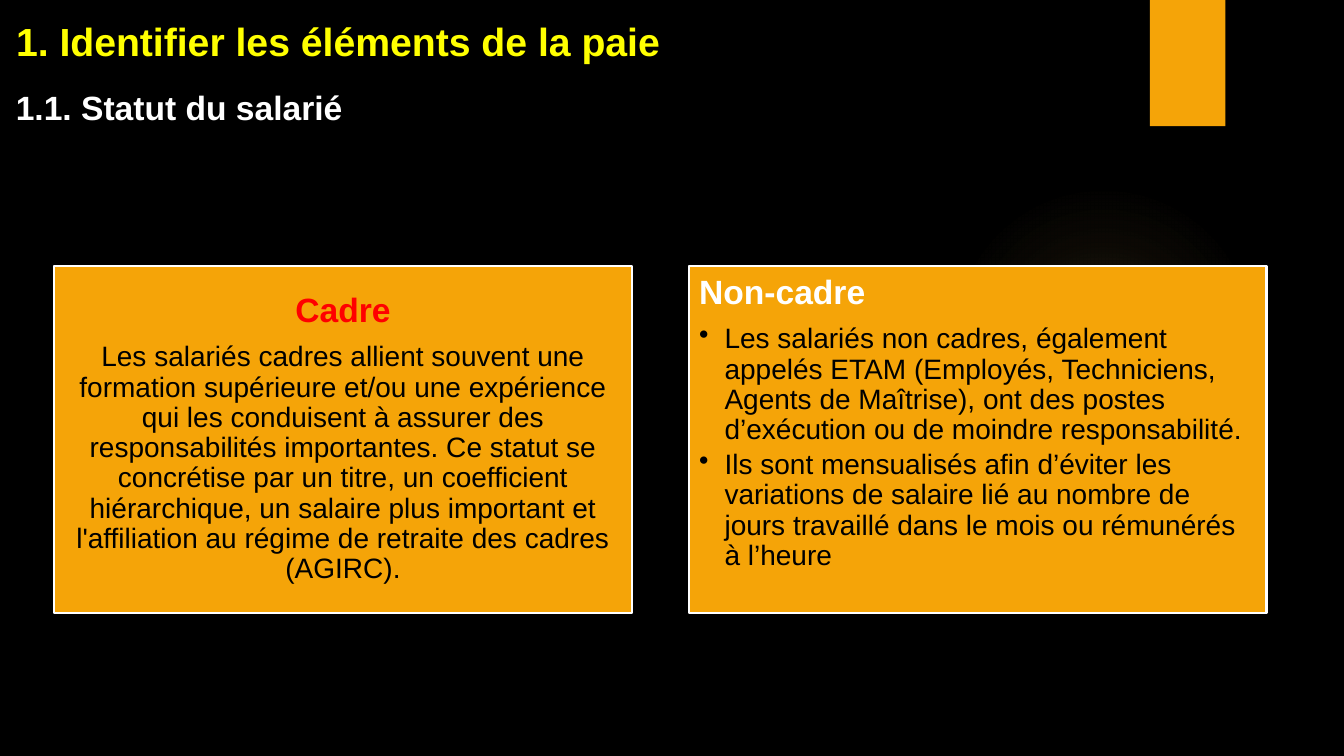
from dataclasses import dataclass

from pptx import Presentation
from pptx import util as u
from pptx.dml.color import RGBColor
from pptx.enum import shapes, text
from pptx.oxml import parse_xml
from pptx.oxml.ns import nsdecls


@dataclass(frozen=True)
class Theme:
    font: str = "Arial"
    background: str = "000000"
    accent: str = "F5A408"
    glow: str = "FAC96A"
    white: str = "FFFFFF"
    black: str = "000000"
    yellow: str = "FFFF00"
    red: str = "FF0000"
    title: int = 28
    heading: int = 24
    body: int = 20


class StatusSlide:
    def __init__(self, presentation, theme):
        self.theme = theme
        self.slide = presentation.slides.add_slide(presentation.slide_layouts[5])
        fill = self.slide.background.fill
        fill.solid()
        fill.fore_color.rgb = RGBColor.from_string(theme.background)

    def fill_paragraph(self, paragraph, content, size, color, bold=False, bullet=False,
                       **formats):
        """Set text and style; formats are paragraph attributes such as alignment."""
        paragraph.text = content
        for name, value in formats.items():
            setattr(paragraph, name, value)
        if bullet:
            properties = paragraph._p.get_or_add_pPr()
            indent = u.Cm(0.64)
            properties.set("marL", str(indent))
            properties.set("indent", str(-indent))
            properties.append(parse_xml(f'<a:buChar {nsdecls("a")} char="•"/>'))
        font = paragraph.font
        for name, value in {"name": self.theme.font, "size": u.Pt(size), "bold": bold}.items():
            setattr(font, name, value)
        font.color.rgb = RGBColor.from_string(color)

    def title(self, content, box):
        shape = self.slide.shapes.title
        shape.left, shape.top, shape.width, shape.height = map(u.Cm, box)
        self.heading(shape, content, self.theme.title, self.theme.yellow)

    def subtitle(self, content, box):
        shape = self.slide.shapes.add_textbox(*map(u.Cm, box))
        self.heading(shape, content, self.theme.heading, self.theme.white)

    def heading(self, shape, content, size, color):
        frame = shape.text_frame
        frame.word_wrap = True
        frame.auto_size = text.MSO_AUTO_SIZE.NONE
        frame.vertical_anchor = text.MSO_ANCHOR.TOP
        self.fill_paragraph(frame.paragraphs[0], content, size, color, bold=True,
                            alignment=text.PP_ALIGN.LEFT)

    def block(self, kind, box):
        shape = self.slide.shapes.add_shape(kind, *map(u.Cm, box))
        shape.shadow.inherit = False
        shape.fill.solid()
        shape.fill.fore_color.rgb = RGBColor.from_string(self.theme.accent)
        shape.line.fill.background()
        return shape

    def glow(self, box):
        """Add a circle of light that fades out towards its edge."""
        shape = self.block(shapes.MSO_SHAPE.OVAL, box)
        shape.fill.background()
        stops = "".join(
            f'<a:gs pos="{position * 1000}"><a:srgbClr val="{self.theme.glow}">'
            f'<a:alpha val="{opacity * 1000}"/></a:srgbClr></a:gs>'
            for position, opacity in ((0, 7), (36, 6), (69, 0), (100, 0)))
        gradient = parse_xml(
            f'<a:gradFill {nsdecls("a")}><a:gsLst>{stops}</a:gsLst><a:path path="circle">'
            '<a:fillToRect l="50000" t="50000" r="50000" b="50000"/></a:path></a:gradFill>')
        properties = shape._element.spPr
        properties.replace(properties.find("{*}noFill"), gradient)

    def card(self, box, name, name_color, texts, anchor, alignment, bullet, gap):
        shape = self.block(shapes.MSO_SHAPE.RECTANGLE, box)
        shape.line.color.rgb = RGBColor.from_string(self.theme.white)
        shape.line.width = u.Pt(1.5)
        frame = shape.text_frame
        frame.word_wrap = True
        frame.vertical_anchor = anchor
        for side in ("left", "right", "top", "bottom"):
            setattr(frame, f"margin_{side}", u.Cm(0.25))
        common = {"alignment": alignment, "line_spacing": 0.9}
        self.fill_paragraph(frame.paragraphs[0], name, self.theme.heading, name_color,
                            bold=True, space_after=u.Pt(9), **common)
        for content in texts:
            self.fill_paragraph(frame.add_paragraph(), content, self.theme.body,
                                self.theme.black, bullet=bullet, space_after=u.Pt(gap),
                                **common)


def main():
    presentation = Presentation()
    presentation.slide_width, presentation.slide_height = u.Cm(33.87), u.Cm(19.05)
    theme = Theme()
    page = StatusSlide(presentation, theme)

    page.glow((23.9, 4.65, 7.82, 7.82))
    page.block(shapes.MSO_SHAPE.RECTANGLE, (28.98, 0, 1.9, 3.18))
    page.subtitle("1.1. Statut du salarié", (0.15, 2.06, 29.72, 1.27))
    page.title("1. Identifier les éléments de la paie", (0.15, 0.3, 21, 1.45))

    card_left, card_top, card_width, card_height, card_step = 1.37, 6.7, 14.55, 8.74, 16
    cards = [
        dict(name="Cadre", name_color=theme.red, anchor=text.MSO_ANCHOR.MIDDLE,
             alignment=text.PP_ALIGN.CENTER, bullet=False, gap=8, texts=[
                 "Les salariés cadres allient souvent une formation supérieure et/ou une "
                 "expérience qui les conduisent à assurer des responsabilités importantes. "
                 "Ce statut se concrétise par un titre, un coefficient hiérarchique, un "
                 "salaire plus important et l'affiliation au régime de retraite des cadres "
                 "(AGIRC)."]),
        dict(name="Non-cadre", name_color=theme.white, anchor=text.MSO_ANCHOR.TOP,
             alignment=text.PP_ALIGN.LEFT, bullet=True, gap=3.5, texts=[
                 "Les salariés non cadres, également appelés ETAM (Employés, Techniciens, "
                 "Agents de Maîtrise), ont des postes d’exécution ou de moindre "
                 "responsabilité.",
                 "Ils sont mensualisés afin d’éviter les variations de salaire lié au "
                 "nombre de jours travaillé dans le mois ou rémunérés à l’heure"]),
    ]
    for index, card in enumerate(cards):
        page.card((card_left + index * card_step, card_top, card_width, card_height), **card)

    presentation.save("out.pptx")


if __name__ == "__main__":
    main()
